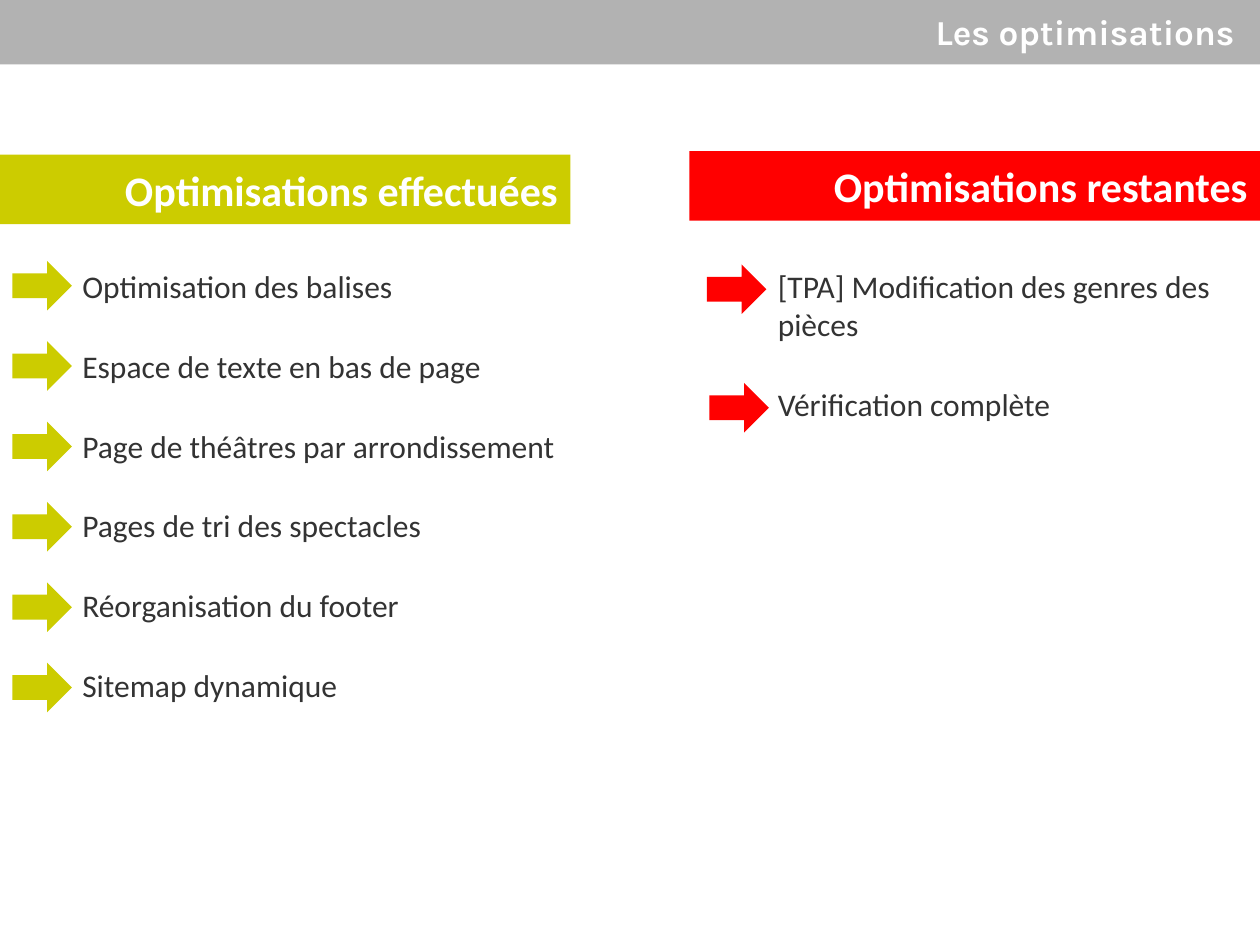
from dataclasses import dataclass

from pptx import Presentation
from pptx import util as u
from pptx.dml.color import RGBColor
from pptx.enum import shapes, text

GREY = RGBColor(0xB2, 0xB2, 0xB2)
OLIVE = RGBColor(0xCC, 0xCC, 0x00)
RED = RGBColor(0xFF, 0x00, 0x00)
WHITE = RGBColor(0xFF, 0xFF, 0xFF)
DARK = RGBColor(0x33, 0x33, 0x33)

SLIDE_WIDTH, SLIDE_HEIGHT = 25.4, 19.05
BANNER_WIDTH, BANNER_HEIGHT = 11.5, 1.4
ARROW_WIDTH, ARROW_HEIGHT = 1.2, 1.0
LIST_TOP, LIST_HEIGHT = 5.26, 10.46
ARROW_PITCH = 1.62
TEXT_INDENT = 1.02


@dataclass
class Column:
    """One column; all lengths are in centimetres."""
    heading: str
    color: RGBColor
    banner_left: float
    banner_top: float
    list_left: float
    list_width: float
    items: list[str]
    arrows: list[tuple[float, float]]


COLUMNS = [
    Column("Optimisations effectuées", OLIVE, 0, 3.12, 0.64, 11.25,
           ["Optimisation des balises",
            "Espace de texte en bas de page",
            "Page de théâtres par arrondissement",
            "Pages de tri des spectacles",
            "Réorganisation du footer",
            "Sitemap dynamique"],
           [(0.25, LIST_TOP + row * ARROW_PITCH) for row in range(6)]),
    Column("Optimisations restantes", RED, SLIDE_WIDTH - BANNER_WIDTH, 3.05, 14.66, 10.74,
           ["[TPA] Modification des genres des pièces",
            "Vérification complète"],
           [(14.25, 5.33), (14.3, 7.72)]),
]


def add_filled(slide, kind, left: float, top: float, width: float, height: float,
               color: RGBColor):
    shape = slide.shapes.add_shape(kind, u.Cm(left), u.Cm(top), u.Cm(width), u.Cm(height))
    shape.shadow.inherit = False
    shape.fill.solid()
    shape.fill.fore_color.rgb = color
    shape.line.fill.background()
    return shape


def set_font(paragraph, name: str, size: int, color: RGBColor, bold: bool = False) -> None:
    font = paragraph.font
    font.name, font.size, font.bold = name, u.Pt(size), bold
    font.color.rgb = color


def write_heading(shape, wording: str, font_name: str, size: int) -> None:
    frame = shape.text_frame
    frame.word_wrap = True
    frame.vertical_anchor = text.MSO_ANCHOR.MIDDLE
    paragraph = frame.paragraphs[0]
    paragraph.text = wording
    paragraph.alignment = text.PP_ALIGN.RIGHT
    set_font(paragraph, font_name, size, WHITE, bold=True)


def add_list(slide, column: Column) -> None:
    box = slide.shapes.add_textbox(u.Cm(column.list_left), u.Cm(LIST_TOP),
                                   u.Cm(column.list_width), u.Cm(LIST_HEIGHT))
    frame = box.text_frame
    frame.word_wrap = True
    frame.margin_left = u.Cm(TEXT_INDENT)
    for index, item in enumerate(column.items):
        paragraph = frame.add_paragraph() if index else frame.paragraphs[0]
        paragraph.text = item
        paragraph.space_before = u.Pt(12 if index else 0)
        paragraph.space_after = u.Pt(12)
        set_font(paragraph, "Calibri", 18, DARK)


def add_column(slide, column: Column) -> None:
    banner = add_filled(slide, shapes.MSO_SHAPE.RECTANGLE, column.banner_left,
                        column.banner_top, BANNER_WIDTH, BANNER_HEIGHT, column.color)
    write_heading(banner, column.heading, "Calibri", 24)
    add_list(slide, column)
    for left, top in column.arrows:
        add_filled(slide, shapes.MSO_SHAPE.RIGHT_ARROW, left, top,
                   ARROW_WIDTH, ARROW_HEIGHT, column.color)


def main() -> None:
    presentation = Presentation()
    presentation.slide_width = u.Cm(SLIDE_WIDTH)
    presentation.slide_height = u.Cm(SLIDE_HEIGHT)
    slide = presentation.slides.add_slide(presentation.slide_layouts[6])

    # Header band and title
    add_filled(slide, shapes.MSO_SHAPE.RECTANGLE, 0, 0, SLIDE_WIDTH, 1.3, GREY)
    title = slide.shapes.add_textbox(0, 0, u.Cm(SLIDE_WIDTH), u.Cm(1.27))
    title.text_frame.margin_right = u.Cm(0.51)
    write_heading(title, "Les optimisations", "Karla", 20)

    # Done and remaining work
    for column in COLUMNS:
        add_column(slide, column)

    presentation.save("out.pptx")


if __name__ == "__main__":
    main()
